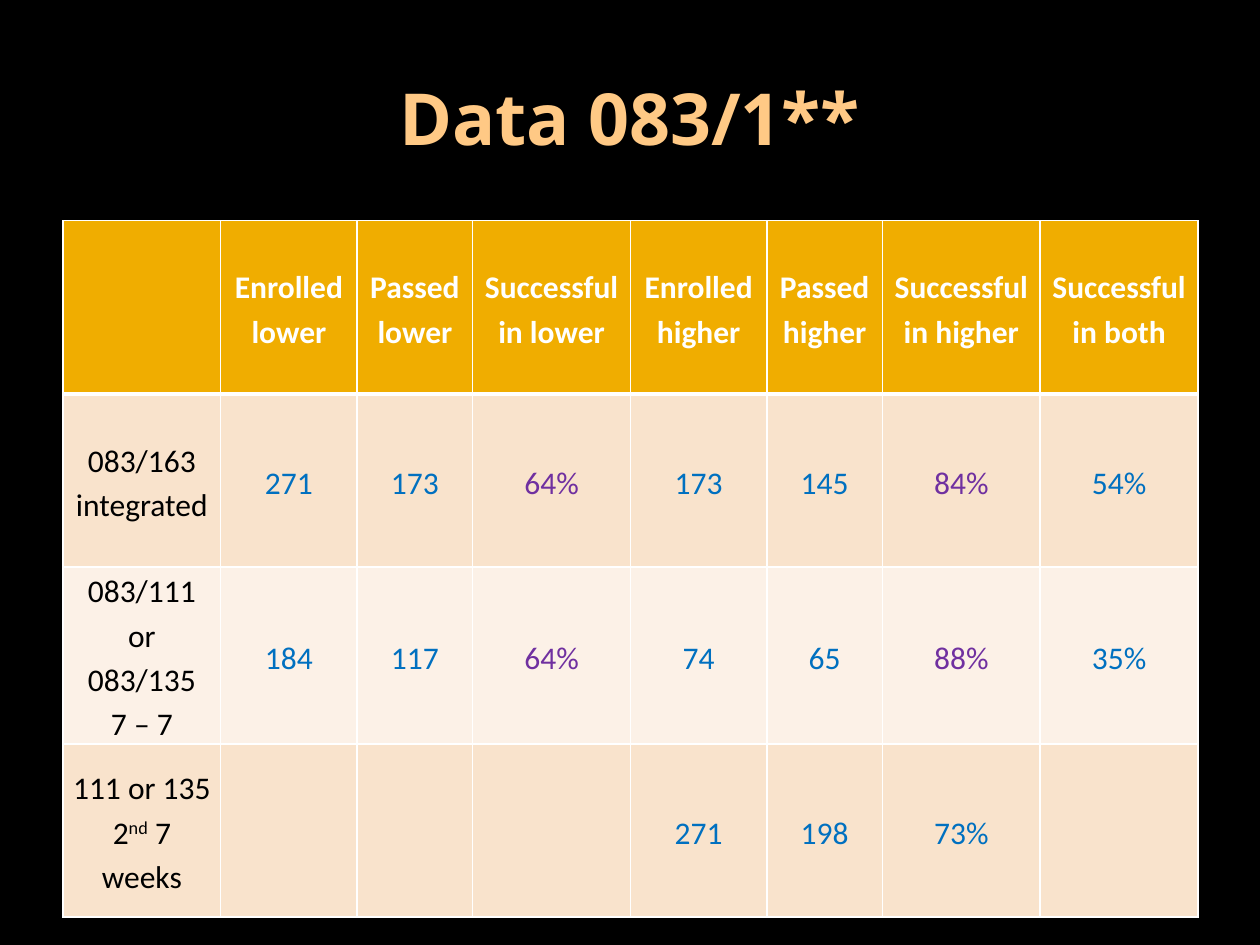
import pptx
import pptx.dml.color
import pptx.enum.text
import pptx.oxml
import pptx.oxml.ns
import pptx.util
from dataclasses import dataclass

Cm = pptx.util.Cm
Pt = pptx.util.Pt
RGB = pptx.dml.color.RGBColor.from_string
CENTER = pptx.enum.text.PP_ALIGN.CENTER
MIDDLE = pptx.enum.text.MSO_ANCHOR.MIDDLE


@dataclass(frozen=True)
class Theme:
    background: str = "000000"
    title: str = "FFC985"
    header_fill: str = "F0AD00"
    band_fills: tuple = ("F9E3CC", "FCF1E7")
    border: str = "FFFFFF"
    header_text: str = "FFFFFF"
    label: str = "000000"
    count: str = "0070C0"
    rate: str = "7030A0"
    title_font: str = "Open Sans"
    body_font: str = "Calibri"
    title_size: float = 41
    body_size: float = 18


class SlideBuilder:
    def __init__(self, presentation, theme):
        self.theme = theme
        self.slide = presentation.slides.add_slide(presentation.slide_layouts[5])
        fill = self.slide.background.fill
        fill.solid()
        fill.fore_color.rgb = RGB(theme.background)

    def style(self, paragraph, name, size, color, bold):
        paragraph.alignment = CENTER
        font = paragraph.font
        font.name, font.size, font.bold = name, Pt(size), bold
        font.color.rgb = RGB(color)

    def title(self, text, left, top, width, height):
        shape = self.slide.shapes.title
        shape.left, shape.top = Cm(left), Cm(top)
        shape.width, shape.height = Cm(width), Cm(height)
        frame = shape.text_frame
        frame.text = text
        frame.vertical_anchor = MIDDLE
        self.style(frame.paragraphs[0], self.theme.title_font,
                   self.theme.title_size, self.theme.title, True)

    def border(self, cell, side, points):
        properties = cell._tc.get_or_add_tcPr()
        properties.append(pptx.oxml.parse_xml(
            f'<a:ln{side} {pptx.oxml.ns.nsdecls("a")} w="{Pt(points)}"><a:solidFill>'
            f'<a:srgbClr val="{self.theme.border}"/></a:solidFill></a:ln{side}>'))

    def cell(self, cell, pieces, fill, color, bold, widths):
        """Fill one cell; every second piece of text is superscript."""
        for side in "LRTB":
            self.border(cell, side, widths.get(side, 1))
        cell.fill.solid()
        cell.fill.fore_color.rgb = RGB(fill)
        cell.vertical_anchor = MIDDLE
        cell.margin_left = cell.margin_right = Cm(0.18)
        cell.margin_top = cell.margin_bottom = 0
        paragraph = cell.text_frame.paragraphs[0]
        paragraph.line_spacing = 1.15
        self.style(paragraph, self.theme.body_font, self.theme.body_size, color, bold)
        for index, piece in enumerate(pieces):
            if index % 2:
                run = paragraph.add_run()
                run.text = piece
                run._r.get_or_add_rPr().set("baseline", "30000")
                continue
            # A newline in the text becomes a line break
            for line_index, line in enumerate(piece.split("\n")):
                if line_index:
                    paragraph.add_line_break()
                if line:
                    paragraph.add_run().text = line

    def table(self, rows, rate_cells, left, top, column_widths, row_height):
        theme = self.theme
        table = self.slide.shapes.add_table(
            len(rows), len(column_widths), Cm(left), Cm(top),
            Cm(sum(column_widths)), Cm(row_height * len(rows))).table
        for column, width in zip(table.columns, column_widths):
            column.width = Cm(width)
        for row_index, row in enumerate(rows):
            table.rows[row_index].height = Cm(row_height)
            header = row_index == 0
            fill = theme.header_fill if header else theme.band_fills[(row_index - 1) % 2]
            # The rule below the header is thicker
            widths = {0: {"B": 3}, 1: {"T": 3}}.get(row_index, {})
            for column_index, content in enumerate(row):
                if header:
                    color = theme.header_text
                elif column_index == 0:
                    color = theme.label
                elif (row_index, column_index) in rate_cells:
                    color = theme.rate
                else:
                    color = theme.count
                pieces = (content,) if isinstance(content, str) else content
                self.cell(table.cell(row_index, column_index), pieces, fill,
                          color, header, widths)


def main():
    presentation = pptx.Presentation()
    presentation.slide_width, presentation.slide_height = Cm(25.4), Cm(19.05)
    builder = SlideBuilder(presentation, Theme())

    # Title
    builder.title("Data 083/1**", 1.27, 0.76, 22.86, 3.18)

    # Enrolment and success table
    rows = [
        ["", "Enrolled lower", "Passed lower", "Successful in lower",
         "Enrolled higher", "Passed higher", "Successful in higher",
         "Successful in both"],
        ["083/163 integrated", "271", "173", "64%", "173", "145", "84%", "54%"],
        ["083/111 or 083/135\n7 – 7", "184", "117", "64%", "74", "65", "88%", "35%"],
        [("111 or 135 2", "nd", " 7 weeks"), "", "", "", "271", "198", "73%", ""],
    ]
    rate_cells = {(row, column) for row in (1, 2) for column in (3, 6)}
    enrolled, passed, successful = 2.75, 2.33, 3.18
    group = [enrolled, passed, successful]
    builder.table(rows, rate_cells, 1.27, 4.45,
                  [successful, *group, *group, successful], 3.49)

    presentation.save("out.pptx")


if __name__ == "__main__":
    main()
